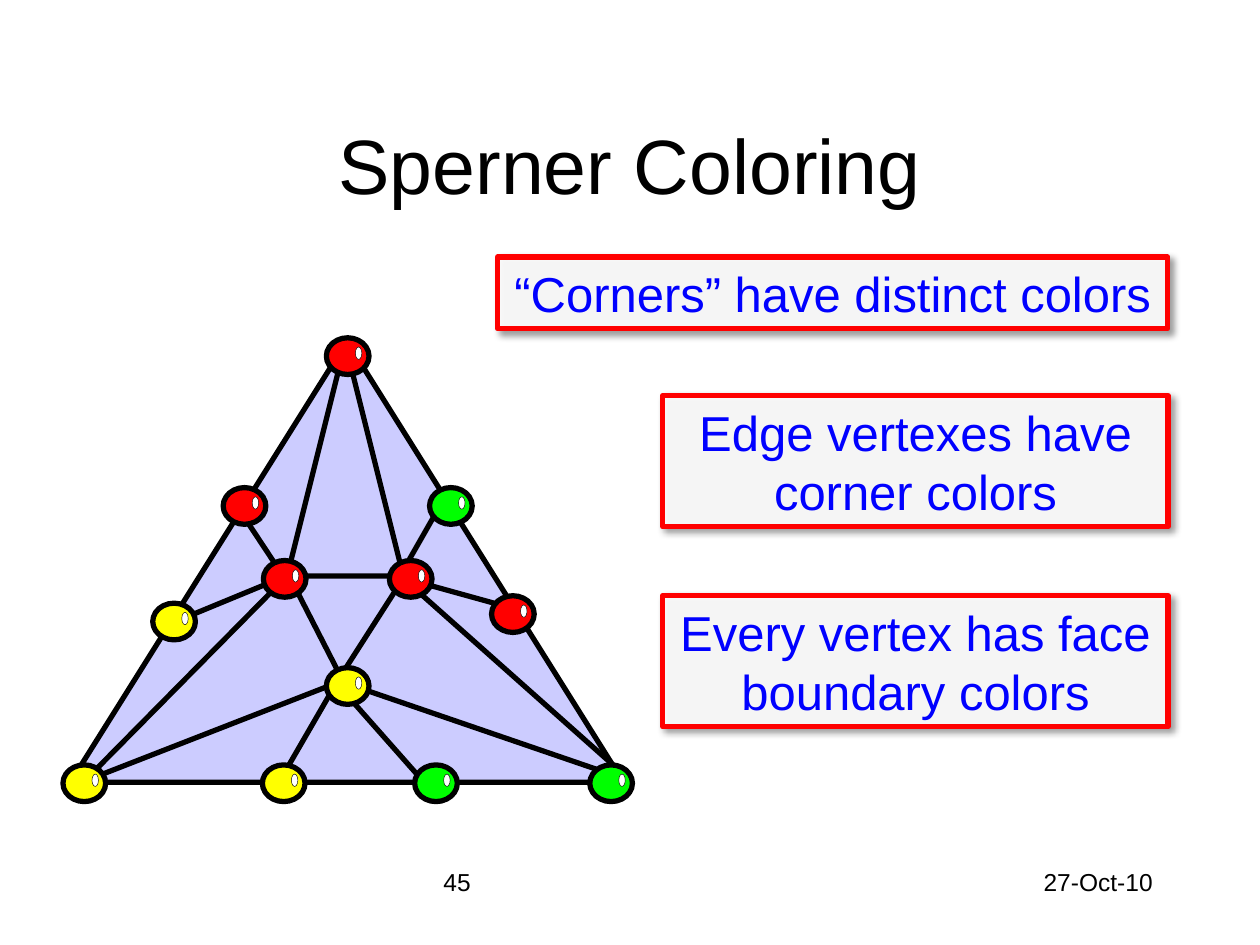
import pptx
import pptx.dml.color
import pptx.enum.shapes
import pptx.enum.text
import pptx.oxml
import pptx.oxml.ns
import pptx.util
from lxml import etree

Cm = pptx.util.Cm
Pt = pptx.util.Pt
RGBColor = pptx.dml.color.RGBColor
Shape = pptx.enum.shapes.MSO_SHAPE
Align = pptx.enum.text.PP_ALIGN
Anchor = pptx.enum.text.MSO_ANCHOR
qn = pptx.oxml.ns.qn

BLACK = RGBColor(0x00, 0x00, 0x00)
WHITE = RGBColor(0xFF, 0xFF, 0xFF)
RED = RGBColor(0xFF, 0x00, 0x00)
GREEN = RGBColor(0x00, 0xFF, 0x00)
YELLOW = RGBColor(0xFF, 0xFF, 0x00)
BLUE = RGBColor(0x00, 0x00, 0xFF)
LAVENDER = RGBColor(0xCC, 0xCC, 0xFF)

SOFT_SHADOW = (
    '<a:outerShdw xmlns:a="http://schemas.openxmlformats.org/drawingml/2006/main"'
    ' blurRad="50800" dist="38100" dir="2700000" algn="tl" rotWithShape="0">'
    '<a:srgbClr val="000000"><a:alpha val="40000"/></a:srgbClr></a:outerShdw>'
)

# Vertices of the triangulation as centre x, centre y, colour (cm)
VERTICES = [
    (12.32, 15.79, GREEN), (8.79, 15.79, GREEN),
    (5.72, 15.79, YELLOW), (1.70, 15.79, YELLOW),
    (10.34, 12.38, RED), (3.51, 12.53, YELLOW),
    (7.01, 13.83, YELLOW), (8.28, 11.67, RED),
    (5.74, 11.67, RED), (7.01, 7.18, RED),
    (9.09, 10.20, GREEN), (4.93, 10.20, RED),
]
FACES = [
    [(6.91, 13.72), (5.84, 11.63), (5.74, 11.66), (1.70, 15.75)],
    [(8.13, 11.66), (6.81, 13.72), (12.73, 15.75)],
    [(5.79, 11.61), (8.13, 11.61), (6.96, 6.93)],
]
# Each inner vertex with the edge vertices it is joined to
SPOKES = {
    (6.78, 13.77): [(8.46, 15.67), (5.56, 15.88)],
    (8.05, 11.63): [(10.36, 12.27), (8.89, 10.16)],
    (5.72, 11.63): [(4.88, 10.36), (3.61, 12.50)],
}
RULES = [
    ("Edge vertexes have corner colors", 13.36, 7.98, 10.19, 2.64, True),
    ("“Corners” have distinct colors", 10.03, 5.18, 13.51, 1.45, False),
    ("Every vertex has face boundary colors", 13.36, 12.01, 10.19, 2.64, True),
]


class Painter:
    """Holds the shared style and the page being built."""

    font_name = "Arial"
    line_width = Pt(3)
    bead_size = (0.86, 0.74)
    glint_size = (0.13, 0.25)
    glint_offset = (0.22, -0.06)

    def __init__(self, page):
        self.page = page

    def set_text(self, frame, text, size, color=BLACK, align=Align.LEFT):
        frame.text = text
        para = frame.paragraphs[0]
        para.alignment = align
        para.font.name = self.font_name
        para.font.size = Pt(size)
        para.font.color.rgb = color

    def outline(self, item, color=BLACK, width=None):
        item.line.color.rgb = color
        item.line.width = width or self.line_width

    def title(self, text, left, top, width, height):
        title = self.page.shapes.title
        title.left, title.top = Cm(left), Cm(top)
        title.width, title.height = Cm(width), Cm(height)
        title.text_frame.vertical_anchor = Anchor.MIDDLE
        self.set_text(title.text_frame, text, 44, align=Align.CENTER)

    def label(self, text, left, top, width, height, align=Align.LEFT):
        box = self.page.shapes.add_textbox(Cm(left), Cm(top), Cm(width), Cm(height))
        box.text_frame.word_wrap = True
        self.set_text(box.text_frame, text, 14, align=align)

    def shape(self, kind, left, top, width, height, fill, line=BLACK, weight=None):
        shape = self.page.shapes.add_shape(
            kind, Cm(left), Cm(top), Cm(width), Cm(height))
        shape.shadow.inherit = False
        shape.fill.solid()
        shape.fill.fore_color.rgb = fill
        self.outline(shape, line, weight)
        return shape

    def face(self, corners):
        start, *others = [(Cm(x), Cm(y)) for x, y in corners]
        builder = self.page.shapes.build_freeform(*start)
        builder.add_line_segments(others, close=True)
        face = builder.convert_to_shape()
        face.shadow.inherit = False
        face.fill.background()
        self.outline(face)

    def edge(self, start, end):
        edge = self.page.shapes.add_connector(
            pptx.enum.shapes.MSO_CONNECTOR.STRAIGHT,
            *(Cm(value) for value in start + end))
        self.outline(edge)
        etree.SubElement(edge.element.spPr, qn("a:effectLst"))

    def oval(self, x, y, size, fill, weight=None):
        width, height = size
        self.shape(Shape.OVAL, x - width / 2, y - height / 2, width, height,
                   fill, weight=weight)

    def vertex(self, x, y, color):
        """Draw a coloured bead with a small white glint."""
        dx, dy = self.glint_offset
        self.oval(x, y, self.bead_size, color)
        self.oval(x + dx, y + dy, self.glint_size, WHITE, Pt(0.25))

    def rule_box(self, text, left, top, width, height, wrap):
        box = self.shape(Shape.RECTANGLE, left, top, width, height, WHITE, RED)
        color = box.element.spPr.find(qn("a:solidFill"))[0]
        etree.SubElement(color, qn("a:alpha"), val="90000")
        effects = box.element.spPr.find(qn("a:effectLst"))
        effects.append(pptx.oxml.parse_xml(SOFT_SHADOW))
        box.text_frame.word_wrap = wrap
        self.set_text(box.text_frame, text, 28, BLUE, Align.CENTER)


def main():
    deck = pptx.Presentation()
    deck.slide_width, deck.slide_height = Cm(25.4), Cm(19.05)
    painter = Painter(deck.slides.add_slide(deck.slide_layouts[5]))

    painter.label("45", 8.69, 17.35, 8.05, 1.27)
    painter.label("27-Oct-10", 18.21, 17.35, 5.28, 1.27, Align.RIGHT)
    painter.title("Sperner Coloring", 1.9, 1.7, 21.6, 3.18)

    painter.shape(Shape.ISOSCELES_TRIANGLE, 1.42, 6.88, 11.15, 8.89, LAVENDER)
    for corners in FACES:
        painter.face(corners)
    for hub, ends in SPOKES.items():
        for end in ends:
            painter.edge(hub, end)
    for vertex in VERTICES:
        painter.vertex(*vertex)
    for rule in RULES:
        painter.rule_box(*rule)

    deck.save("out.pptx")


if __name__ == "__main__":
    main()
